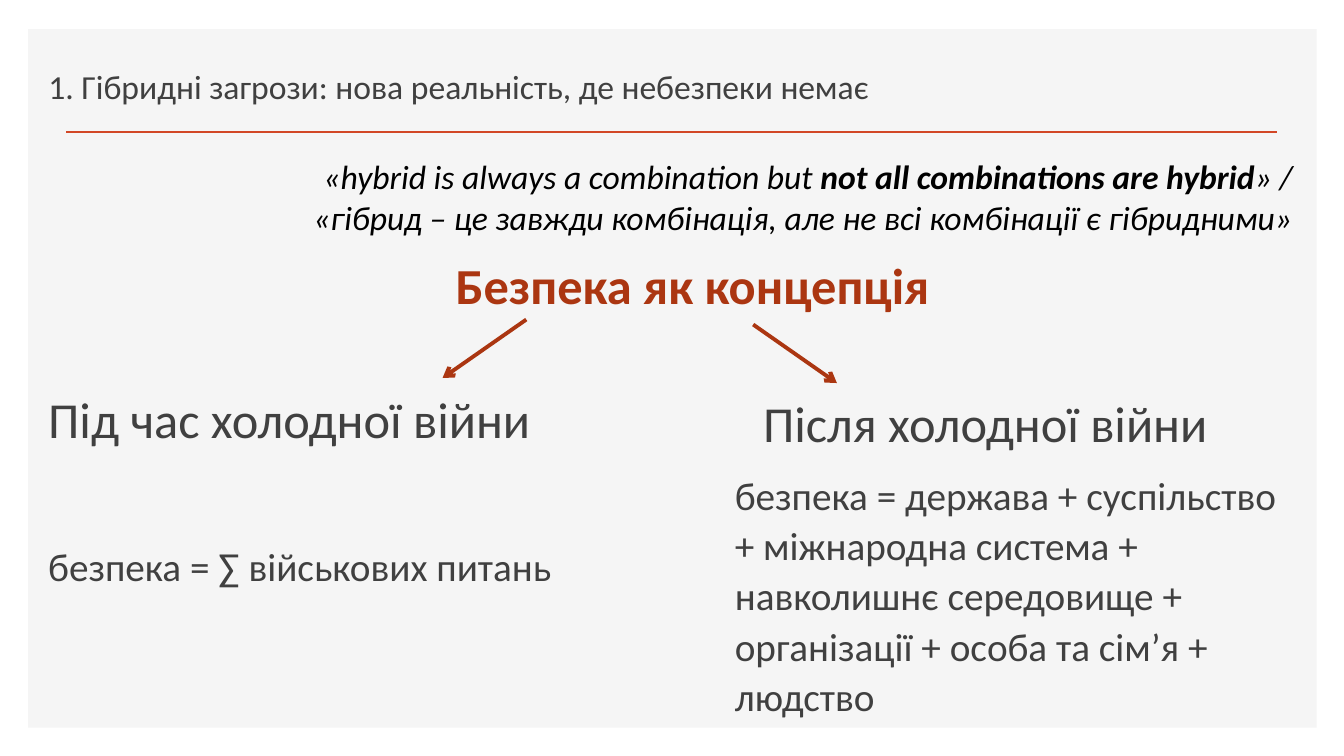
"""Build a slide on security as a concept during and after the Cold War."""
from lxml import etree
from pptx import Presentation, util as u
from pptx.dml.color import RGBColor
from pptx.enum import shapes, text
from pptx.oxml.ns import qn

HUE = {"panel": "F5F5F5", "rule": "D24726", "accent": "AB3611",
       "body": "404040", "quote": "000000"}
deck = Presentation()
deck.slide_width, deck.slide_height = u.Inches(13.33), u.Inches(7.5)
col, row = deck.slide_width / 100, deck.slide_height / 100
slide = deck.slides.add_slide(deck.slide_layouts[5])


def write(lines, box, shape=None, size=24, hue="body", bold=False, slant=False,
          align=text.PP_ALIGN.LEFT, lead=1.0, gap=0, anchor=text.MSO_ANCHOR.TOP):
    """Fill a text box; each line is a list of words and strong flags."""
    x, y, w, h = int(box[0] * col), int(box[1] * row), int(box[2] * col), int(box[3] * row)
    shape = shape or slide.shapes.add_textbox(x, y, w, h)
    shape.left, shape.top, shape.width, shape.height = x, y, w, h
    frame = shape.text_frame
    frame.word_wrap, frame.auto_size = True, text.MSO_AUTO_SIZE.NONE
    frame.vertical_anchor = anchor
    for i, line in enumerate(lines):
        para = frame.add_paragraph() if i else frame.paragraphs[0]
        para.alignment, para.line_spacing = align, lead
        para.space_before = para.space_after = u.Pt(gap)
        for words, strong in line:
            run = para.add_run()
            run.text = words
            font = run.font
            font.name, font.size = "Calibri", u.Pt(size)
            font.bold, font.italic = bold or strong, slant
            font.color.rgb = RGBColor.from_string(HUE[hue])


panel = slide.shapes.add_shape(shapes.MSO_SHAPE.RECTANGLE, int(2.1 * col),
                               int(3.87 * row), int(95.87 * col), int(92.4 * row))
panel.shadow.inherit = False
panel.fill.solid()
panel.fill.fore_color.rgb = RGBColor.from_string(HUE["panel"])
panel.line.fill.background()

title = slide.shapes.title
title.element.getparent().append(title.element)
write([[("1. Гібридні загрози: нова реальність, де небезпеки немає", False)]],
      (2.85, 7.47, 92.5, 7.73), shape=title, gap=10, anchor=text.MSO_ANCHOR.MIDDLE)
write([[("«hybrid is always a combination but ", False),
        ("not all combinations are hybrid", True), ("» /", False)],
       [("«гібрид – це завжди комбінація, але не всі комбінації є гібридними»", False)]],
      (3.15, 20, 93.77, 12.13), hue="quote", slant=True, align=text.PP_ALIGN.RIGHT)
write([[("Безпека як концепція", False)]], (33.16, 32.4, 38.48, 9.6), size=36,
      hue="accent", bold=True, align=text.PP_ALIGN.JUSTIFY, lead=1.07, gap=6)

for words, box in (("Під час холодної війни", (2.85, 50.67, 42.24, 9.47)),
                   ("Після холодної війни", (56.04, 51.2, 40.89, 9.47))):
    write([[(words, False)]], box, size=36)

write([[("безпека = ∑ військових питань", False)]], (2.85, 71.07, 39.76, 7.6), size=28)
write([[("безпека = держава + суспільство + міжнародна система + навколишнє "
         "середовище + організації + особа та сім’я + людство", False)]],
      (53.94, 61.2, 42.99, 34.67), size=28, lead=1.07, gap=6)

for x, y, far, low, hue, width, tip in (
        (4.95, 17.47, 95.05, 17.47, "rule", 2, False),
        (39.16, 42.27, 32.93, 50, "accent", 2.75, True),
        (56.04, 42.93, 62.27, 50.67, "accent", 2.75, True)):
    line = slide.shapes.add_connector(shapes.MSO_CONNECTOR.STRAIGHT, int(x * col),
                                      int(y * row), int(far * col), int(low * row))
    line.line.color.rgb = RGBColor.from_string(HUE[hue])
    line.line.width = u.Pt(width)
    prop = line.element.find(qn("p:spPr"))
    if tip:
        etree.SubElement(prop.find(qn("a:ln")), qn("a:tailEnd"), type="arrow")
    etree.SubElement(prop, qn("a:effectLst"))

deck.save("out.pptx")
